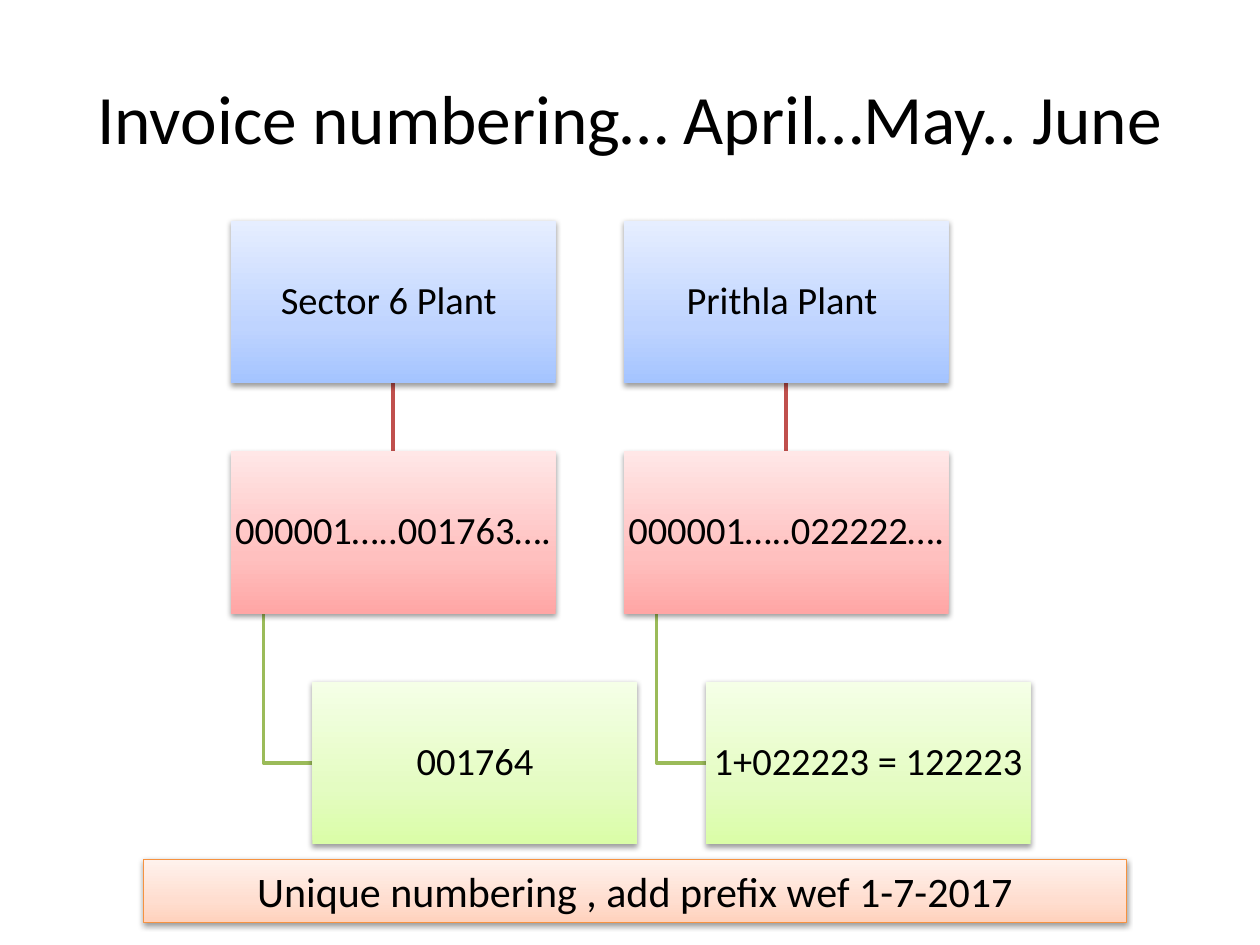
"""Build the invoice numbering slide with two plant hierarchies and a closing note."""
from copy import deepcopy

from lxml import etree
from pptx import Presentation
from pptx.dml.color import RGBColor
from pptx.enum import shapes, text
from pptx.oxml import ns
from pptx.util import Inches, Pt

BLACK = RGBColor(0x00, 0x00, 0x00)
RED = RGBColor(0xC0, 0x50, 0x4D)
GREEN = RGBColor(0x9B, 0xBB, 0x59)
ORANGE = RGBColor(0xF6, 0x92, 0x40)
BLUE_FADE = [RGBColor(0xA4, 0xC4, 0xFF), RGBColor(0xBF, 0xD4, 0xFF), RGBColor(0xE6, 0xEE, 0xFF)]
RED_FADE = [RGBColor(0xFF, 0xA6, 0xA5), RGBColor(0xFF, 0xC0, 0xBF), RGBColor(0xFF, 0xE7, 0xE7)]
GREEN_FADE = [RGBColor(0xDA, 0xFD, 0xA7), RGBColor(0xE4, 0xFC, 0xC2), RGBColor(0xF5, 0xFF, 0xE7)]
ORANGE_FADE = [RGBColor(0xFF, 0xD2, 0xBD), RGBColor(0xFF, 0xDE, 0xD0), RGBColor(0xFF, 0xF2, 0xED)]


def write(shape, wording, size, spacing=1.0, **frame_format):
    frame = shape.text_frame
    frame_format = {"word_wrap": True, "vertical_anchor": text.MSO_ANCHOR.MIDDLE, **frame_format}
    for name, value in frame_format.items():
        setattr(frame, name, value)
    paragraph = frame.paragraphs[0]
    paragraph.alignment = text.PP_ALIGN.CENTER
    paragraph.line_spacing = spacing
    run = paragraph.add_run()
    run.text = wording
    run.font.name = "Calibri"
    run.font.size = Pt(size)
    run.font.color.rgb = BLACK


def add_panel(left, top, width, height, fade):
    panel = slide.shapes.add_shape(
        shapes.MSO_SHAPE.RECTANGLE, Inches(left), Inches(top), Inches(width), Inches(height))
    panel.line.fill.background()
    panel.fill.gradient()
    panel.fill.gradient_angle = 90
    stops = panel._element.spPr.find(".//" + ns.qn("a:gsLst"))
    stops.insert(1, deepcopy(stops[0]))
    for stop, position, color in zip(panel.fill.gradient_stops, (0, 0.35, 1), fade):
        stop.position = position
        stop.color.rgb = color
    panel.shadow.inherit = False
    effects = panel._element.spPr.find(ns.qn("a:effectLst"))
    shadow = etree.SubElement(effects, ns.qn("a:outerShdw"), blurRad="40000", dist="20000",
                              dir="5400000", rotWithShape="0")
    shade = etree.SubElement(shadow, ns.qn("a:srgbClr"), val="000000")
    etree.SubElement(shade, ns.qn("a:alpha"), val="38000")
    return panel


deck = Presentation()
deck.slide_width, deck.slide_height = Inches(10), Inches(7.5)
slide = deck.slides.add_slide(deck.slide_layouts[6])

title = slide.shapes.add_textbox(Inches(0.5), Inches(0.3), Inches(9), Inches(1.25))
write(title, "Invoice numbering… April…May.. June", 39.6)

BOX_WIDTH, BOX_HEIGHT = 2.58, 1.29
FIRST_LEFT, COLUMN_STEP = 1.83, 3.12
FIRST_TOP, ROW_STEP = 1.75, 1.83
LAST_INDENT, STEM_INDENT = 0.65, 0.26
plants = [
    ("Sector 6 Plant ", "000001…..001763….", "001764"),
    ("Prithla Plant ", "000001…..022222….", "1+022223 = 122223"),
]
levels = [(BLUE_FADE, 0), (RED_FADE, 0), (GREEN_FADE, LAST_INDENT)]
tops = [FIRST_TOP + ROW_STEP * row for row in range(len(levels))]

for column, wordings in enumerate(plants):
    left = FIRST_LEFT + COLUMN_STEP * column
    center = Inches(left + BOX_WIDTH / 2)
    link = slide.shapes.add_connector(
        shapes.MSO_CONNECTOR.STRAIGHT, center, Inches(tops[0] + BOX_HEIGHT), center, Inches(tops[1]))
    etree.SubElement(link._element.spPr, ns.qn("a:effectLst"))

    stem, branch = Inches(left + STEM_INDENT), Inches(tops[2] + BOX_HEIGHT / 2)
    outline = slide.shapes.build_freeform(stem, Inches(tops[1] + BOX_HEIGHT))
    outline.add_line_segments([(stem, branch), (Inches(left + LAST_INDENT), branch)], close=False)
    elbow = outline.convert_to_shape()
    elbow.fill.background()
    elbow.shadow.inherit = False

    for line, color in ((link.line, RED), (elbow.line, GREEN)):
        line.color.rgb = color
        line.width = Pt(2)

    for wording, top, (fade, indent) in zip(wordings, tops, levels):
        box = add_panel(left + indent, top, BOX_WIDTH, BOX_HEIGHT, fade)
        margins = {f"margin_{side}": Inches(0.02) for side in ("left", "top", "right", "bottom")}
        write(box, wording, 22, 0.9, **margins)

note = add_panel(1.14, 6.82, 7.8, 0.5, ORANGE_FADE)
note.line.color.rgb = ORANGE
note.line.width = Pt(0.75)
write(note, "Unique numbering , add prefix wef 1-7-2017", 24)

deck.save("out.pptx")
